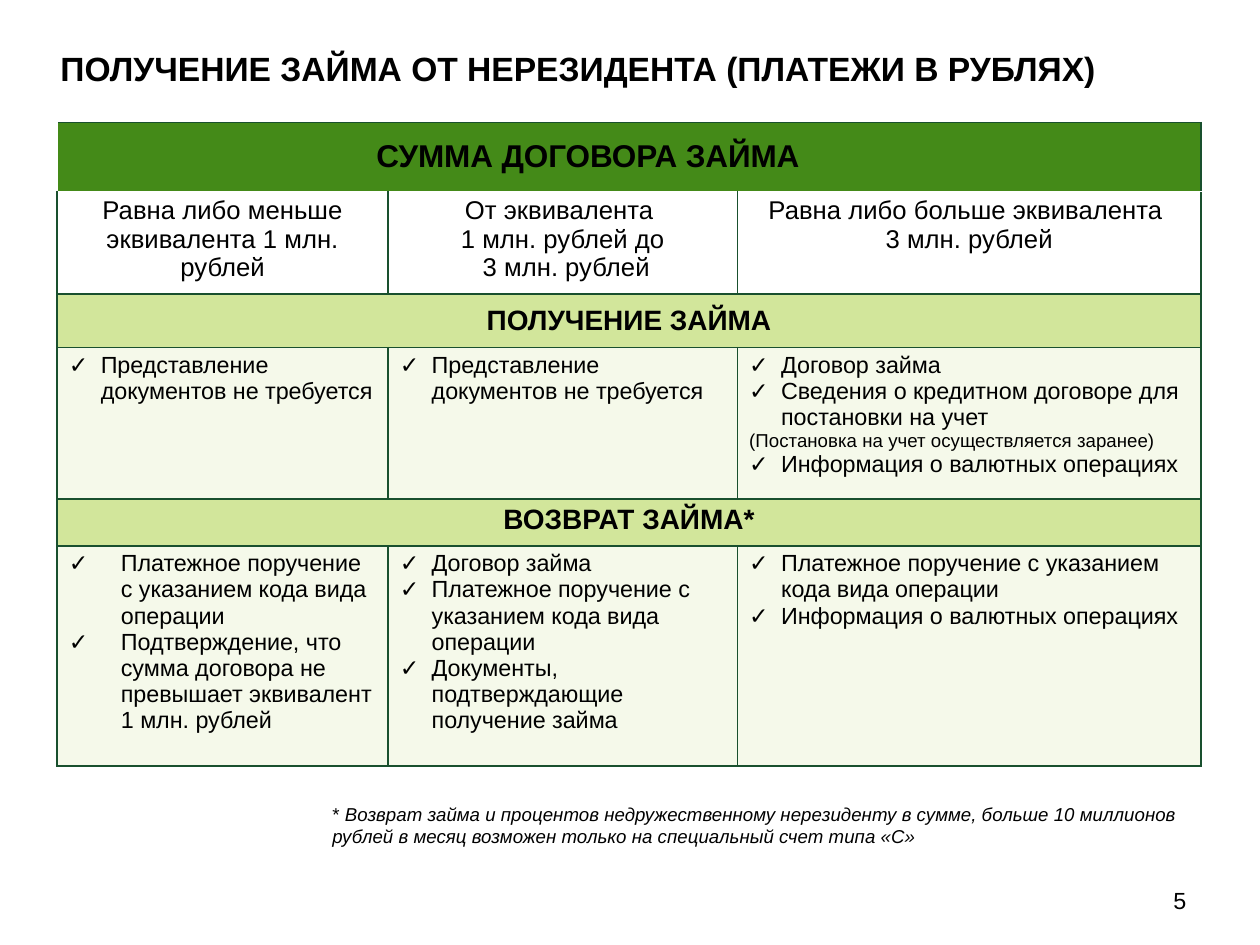
from lxml.etree import SubElement
from pptx import Presentation
from pptx.dml.color import RGBColor
from pptx.enum.text import MSO_ANCHOR as Anchor, MSO_AUTO_SIZE as AutoSize, PP_ALIGN as Align
from pptx.oxml import parse_xml
from pptx.oxml.ns import nsdecls, qn
from pptx.util import Inches, Pt

FONT = "Arial"
BLACK, WHITE = "000000", "FFFFFF"
BORDER, HEADER_GREEN, BAND_GREEN, BODY_GREEN = "19502E", "448A18", "A6CE39", "EDF5D7"
SLIDE_WIDTH = 7.5
COLUMN_WIDTHS = [1.97, 2.08, 2.76]
ROW_HEIGHTS = [0.41, 0.61, 0.32, 0.9, 0.28, 1.31]

AMOUNTS = [
    ["Равна либо меньше эквивалента 1 млн. рублей"],
    ["От эквивалента ", " 1 млн. рублей до ", " 3 млн. рублей"],
    ["Равна либо больше эквивалента ", "3 млн. рублей"],
]
NO_DOCUMENTS = ["Представление документов не требуется"]
REGISTRATION_NOTE = "(Постановка на учет осуществляется заранее)"
RECEIVING = [
    NO_DOCUMENTS,
    NO_DOCUMENTS,
    ["Договор займа", "Сведения о кредитном договоре для постановки на учет",
     REGISTRATION_NOTE, "Информация о валютных операциях"],
]
PAYMENT_ORDER = "Платежное поручение с указанием кода вида операции"
REPAYMENT = [
    [PAYMENT_ORDER,
     "Подтверждение, что сумма договора не превышает эквивалент 1 млн. рублей"],
    ["Договор займа", PAYMENT_ORDER, "Документы, подтверждающие получение займа"],
    [PAYMENT_ORDER, "Информация о валютных операциях"],
]


def color(value):
    return RGBColor.from_string(value)


def style_font(font, size, bold=False):
    font.name, font.size, font.bold = FONT, Pt(size), bold
    font.color.rgb = color(BLACK)


def add_check_mark(para, indent):
    properties = para._p.get_or_add_pPr()
    properties.set("marL", str(Inches(indent)))
    properties.set("indent", str(-Inches(indent)))
    SubElement(properties, qn("a:buFont")).set("typeface", FONT)
    SubElement(properties, qn("a:buChar")).set("char", "✓")


def fill_cell(cell, fill, opacity=100):
    cell.fill.solid()
    cell.fill.fore_color.rgb = color(fill)
    if opacity < 100:
        rgb = cell._tc.tcPr.find(".//" + qn("a:srgbClr"))
        SubElement(rgb, qn("a:alpha")).set("val", str(opacity * 1000))


def border_cell(cell, **edges):
    """Draw the four borders; edges overrides the colour of a side (L, R, T, B)."""
    properties = cell._tc.get_or_add_tcPr()
    for position, side in enumerate("LRTB"):
        properties.insert(position, parse_xml(
            f'<a:ln{side} {nsdecls("a")} w="{Pt(0.75)}"><a:solidFill>'
            f'<a:srgbClr val="{edges.get(side, BORDER)}"/></a:solidFill></a:ln{side}>'))


def write_cell(cell, lines, size, bold=False, align=Align.CENTER, check_indent=None):
    cell.margin_left = cell.margin_right = Inches(0.07)
    cell.margin_top = cell.margin_bottom = Inches(0.03)
    frame = cell.text_frame
    for index, line in enumerate(lines):
        para = frame.paragraphs[0] if index == 0 else frame.add_paragraph()
        para.text = line
        para.alignment = align
        is_note = line == REGISTRATION_NOTE
        if check_indent and not is_note:
            add_check_mark(para, check_indent)
        style_font(para.font, 8 if is_note else size, bold)


def add_band(table, row, text, size, fill, opacity=100, anchor=Anchor.MIDDLE, **edges):
    """Fill a whole row with one merged heading cell."""
    cells = list(table.rows[row].cells)
    for cell in cells:
        fill_cell(cell, fill, opacity)
        border_cell(cell, **edges)
    cells[0].merge(cells[-1])
    write_cell(cells[0], [text], size, bold=True)
    cells[0].vertical_anchor = anchor
    return cells[0]


def add_check_lists(table, row, lists, indents):
    for cell, lines, indent in zip(table.rows[row].cells, lists, indents):
        fill_cell(cell, BODY_GREEN, 50)
        border_cell(cell)
        write_cell(cell, lines, 10, align=Align.LEFT, check_indent=indent)


def add_loan_table(page):
    table = page.shapes.add_table(
        len(ROW_HEIGHTS), len(COLUMN_WIDTHS), Inches(0.34), Inches(0.73),
        Inches(sum(COLUMN_WIDTHS)), Inches(sum(ROW_HEIGHTS))).table
    table.first_row = table.horz_banding = False
    for column, width in zip(table.columns, COLUMN_WIDTHS):
        column.width = Inches(width)
    for row, height in zip(table.rows, ROW_HEIGHTS):
        row.height = Inches(height)

    header = add_band(table, 0, "СУММА ДОГОВОРА ЗАЙМА", 13.5, HEADER_GREEN, L=WHITE, B=WHITE)
    header.margin_left, header.margin_right = Inches(0.03), Inches(0.52)
    for cell, lines in zip(table.rows[1].cells, AMOUNTS):
        cell.fill.background()
        border_cell(cell, T=WHITE)
        write_cell(cell, lines, 11)
    add_band(table, 2, "ПОЛУЧЕНИЕ ЗАЙМА", 12, BAND_GREEN, 50)
    add_check_lists(table, 3, RECEIVING, [0.19, 0.19, 0.19])
    add_band(table, 4, "ВОЗВРАТ ЗАЙМА*", 12, BAND_GREEN, 50, Anchor.TOP)
    add_check_lists(table, 5, REPAYMENT, [0.31, 0.19, 0.19])


def set_title(page, text):
    title = page.shapes.title
    title.left, title.top = Inches(0.26), Inches(0.17)
    title.width, title.height = Inches(6.9), Inches(0.41)
    frame = title.text_frame
    frame.text = text
    frame.auto_size = AutoSize.NONE
    frame.vertical_anchor = Anchor.BOTTOM
    para = frame.paragraphs[0]
    para.alignment, para.line_spacing = Align.LEFT, 0.9
    style_font(para.font, 14.4, bold=True)


def add_text(page, left, top, width, height, spans, size, align=Align.LEFT, anchor=Anchor.TOP):
    """Add a one-paragraph box; spans are pairs of text and italic."""
    frame = page.shapes.add_textbox(
        Inches(left), Inches(top), Inches(width), Inches(height)).text_frame
    frame.word_wrap = True
    frame.vertical_anchor = anchor
    para = frame.paragraphs[0]
    para.alignment = align
    style_font(para.font, size)
    for text, italic in spans:
        span = para.add_run()
        span.text = text
        span.font.italic = italic


def main():
    deck = Presentation()
    deck.slide_width, deck.slide_height = Inches(SLIDE_WIDTH), Inches(SLIDE_WIDTH * 3 / 4)
    page = deck.slides.add_slide(deck.slide_layouts[5])
    set_title(page, "ПОЛУЧЕНИЕ ЗАЙМА ОТ НЕРЕЗИДЕНТА (ПЛАТЕЖИ В РУБЛЯХ)")
    add_loan_table(page)
    add_text(page, 6.39, 5.21, 0.77, 0.3, [("5", False)], 10, Align.RIGHT, Anchor.MIDDLE)
    add_text(page, 1.88, 4.73, 5.62, 0.37, [
        ("* ", False),
        ("Возврат займа и процентов недружественному нерезиденту в сумме, больше 10 миллионов "
         "рублей в месяц возможен только на специальный счет типа «С»", True)], 8)
    deck.save("out.pptx")


if __name__ == "__main__":
    main()
